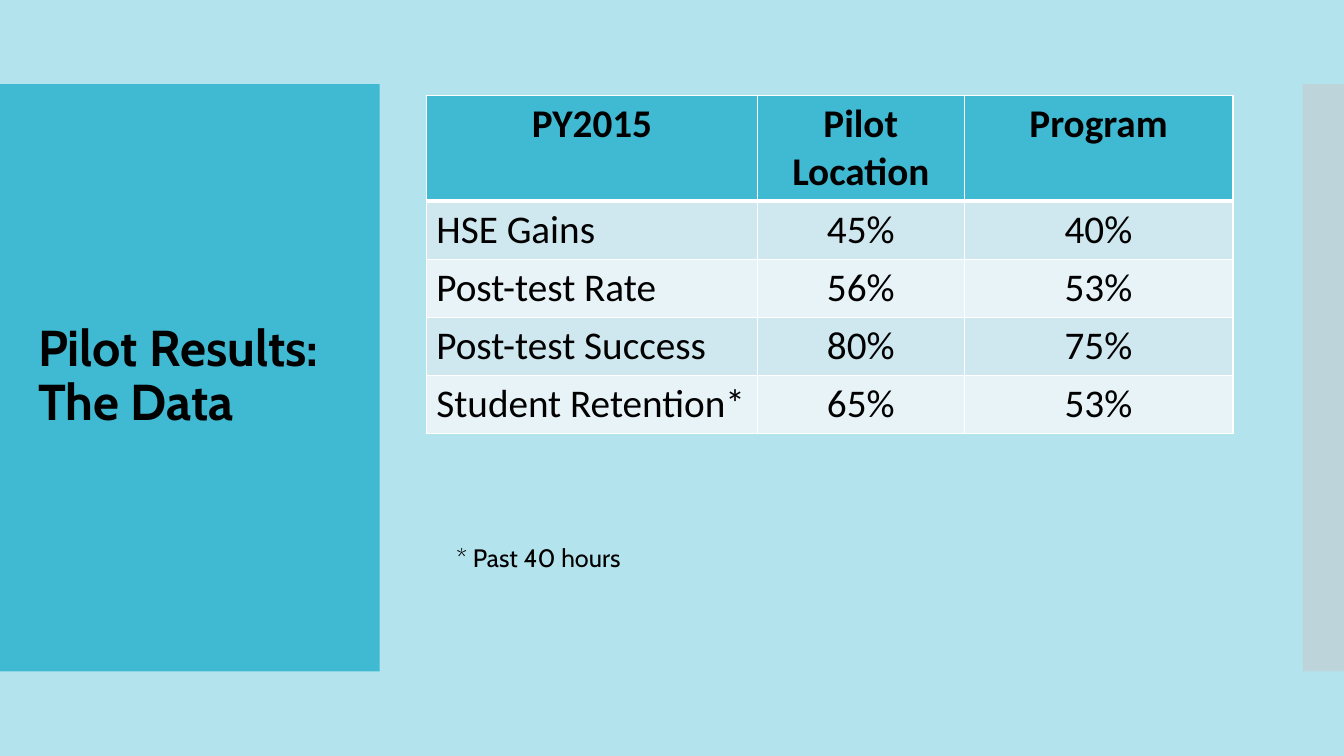
from lxml import etree
from pptx import Presentation
from pptx import util as u
from pptx.dml import color
from pptx.enum import shapes, text
from pptx.oxml import ns


def rgb(value):
    return color.RGBColor.from_string(value)


class PilotSlide:
    ink = "000000"
    accent = "40BAD2"
    background = "B3E3ED"
    bands = ("CFE7EE", "E8F3F7")
    border = "FFFFFF"
    display_font = "Cabin"
    table_font = "Calibri"

    def __init__(self, deck):
        self.page = deck.slides.add_slide(deck.slide_layouts[5])
        fill = self.page.background.fill
        fill.solid()
        fill.fore_color.rgb = rgb(self.background)

    def style(self, para, size, font, bold=False, align=text.PP_ALIGN.LEFT):
        para.alignment = align
        para.font.size = u.Pt(size)
        para.font.name = font
        para.font.bold = bold
        para.font.color.rgb = rgb(self.ink)

    def title(self, words, left, top, width, height):
        box = self.page.shapes.title
        box.left, box.top = u.Pt(left), u.Pt(top)
        box.width, box.height = u.Pt(width), u.Pt(height)
        frame = box.text_frame
        frame.text = words
        frame.word_wrap = True
        frame.auto_size = text.MSO_AUTO_SIZE.NONE
        frame.vertical_anchor = text.MSO_ANCHOR.MIDDLE
        para = frame.paragraphs[0]
        para.line_spacing = 0.9
        self.style(para, 36, self.display_font, bold=True)
        span = para.runs[0]
        span.font.size = u.Pt(36)
        span.font.element.set("spc", "-60") if hasattr(span.font, "element") else None

    def panel(self, fill, left, top, width, height, opacity=100):
        panel = self.page.shapes.add_shape(
            shapes.MSO_SHAPE.RECTANGLE,
            u.Pt(left), u.Pt(top), u.Pt(width), u.Pt(height))
        panel.shadow.inherit = False
        panel.line.fill.background()
        panel.fill.solid()
        panel.fill.fore_color.rgb = rgb(fill)
        if opacity < 100:
            tint = panel.element.spPr.find(".//" + ns.qn("a:srgbClr"))
            etree.SubElement(tint, ns.qn("a:alpha"), val=str(opacity * 1000))
        self.page.shapes.title.element.addprevious(panel.element)

    def cell_borders(self, cell, top, bottom):
        properties = cell._tc.get_or_add_tcPr()
        for side, weight in (("L", 1), ("R", 1), ("T", top), ("B", bottom)):
            line = etree.SubElement(
                properties, ns.qn("a:ln" + side), w=str(u.Pt(weight)))
            solid = etree.SubElement(line, ns.qn("a:solidFill"))
            etree.SubElement(solid, ns.qn("a:srgbClr"), val=self.border)

    def table(self, rows, left, top, widths, heights):
        table = self.page.shapes.add_table(
            len(rows), len(widths), u.Pt(left), u.Pt(top),
            u.Pt(sum(widths)), u.Pt(sum(heights))).table
        for column, width in zip(table.columns, widths):
            column.width = u.Pt(width)
        for row, height in zip(table.rows, heights):
            row.height = u.Pt(height)
        for i, values in enumerate(rows):
            header = i == 0
            fill = self.accent if header else self.bands[(i - 1) % 2]
            for j, value in enumerate(values):
                cell = table.cell(i, j)
                self.cell_borders(cell, 3 if i == 1 else 1, 3 if header else 1)
                cell.fill.solid()
                cell.fill.fore_color.rgb = rgb(fill)
                cell.text = value
                centred = header or j > 0
                align = text.PP_ALIGN.CENTER if centred else text.PP_ALIGN.LEFT
                self.style(cell.text_frame.paragraphs[0], 28,
                           self.table_font, header, align)

    def note(self, words, left, top, width, height):
        box = self.page.shapes.add_textbox(
            u.Pt(left), u.Pt(top), u.Pt(width), u.Pt(height))
        frame = box.text_frame
        frame.word_wrap = True
        frame.auto_size = text.MSO_AUTO_SIZE.SHAPE_TO_FIT_TEXT
        frame.text = words
        self.style(frame.paragraphs[0], 18, self.display_font)


def main():
    deck = Presentation()
    deck.slide_width, deck.slide_height = u.Pt(960), u.Pt(540)
    slide = PilotSlide(deck)
    slide.panel(slide.accent, 0, 60, 271.2, 419.5)
    slide.panel("C8C8C8", 930.5, 60, 29.5, 419.5, opacity=50)
    slide.title("Pilot Results: The Data", 20, 88.5, 232, 362)
    results = [
        ("PY2015", "Pilot Location", "Program"),
        ("HSE Gains", "45%", "40%"),
        ("Post-test Rate", "56%", "53%"),
        ("Post-test Success", "80%", "75%"),
        ("Student Retention*", "65%", "53%"),
    ]
    slide.table(results, 304.5, 68, (236.6, 147.6, 192), (75,) + (41.4,) * 4)
    slide.note("* Past 40 hours", 319, 384, 257, 29)
    deck.save("out.pptx")


if __name__ == "__main__":
    main()
